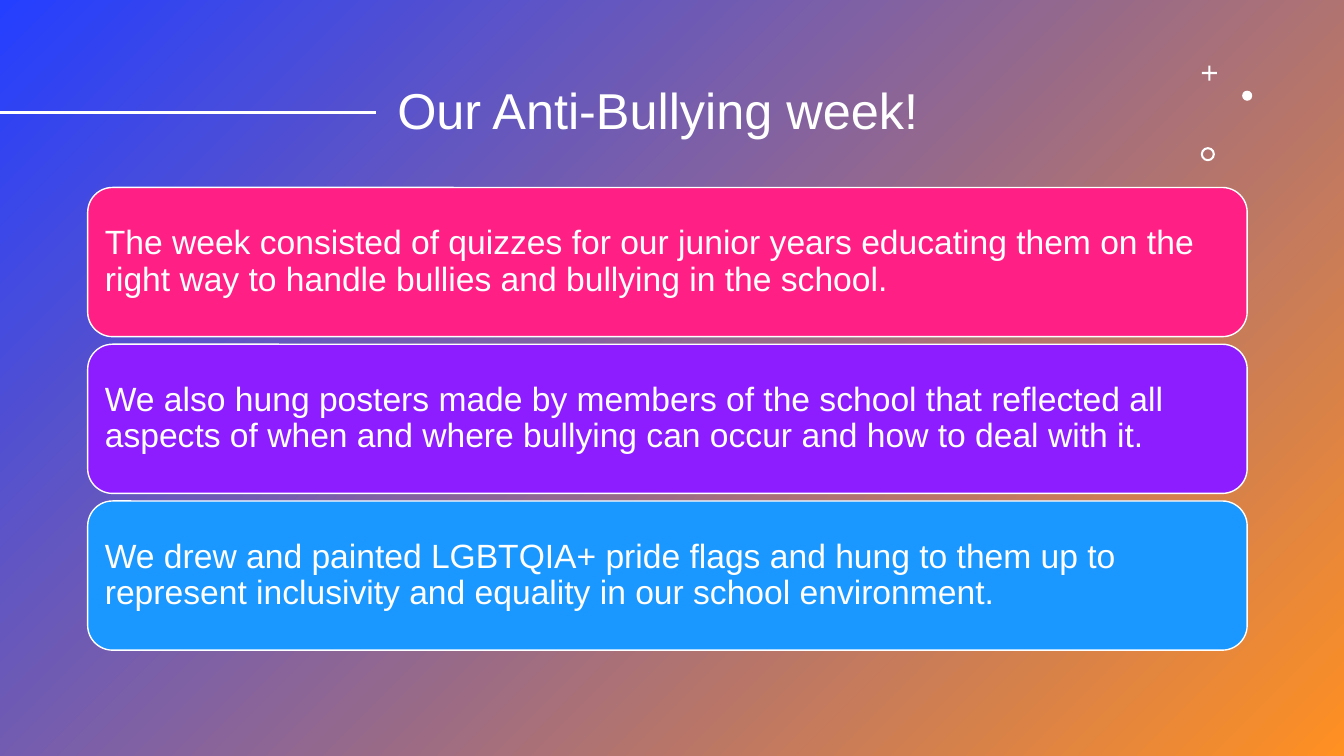
import pptx
import pptx.util
import pptx.dml.color
import pptx.enum.shapes
import pptx.enum.text
from lxml import etree

Inches, Pt = pptx.util.Inches, pptx.util.Pt
SHAPE = pptx.enum.shapes.MSO_SHAPE
TEXT = pptx.enum.text

TITLE = "Our Anti-Bullying week!"
WHITE = "FFFFFF"
GRADIENT = ["243FFF", "FF9022"]
CARDS = [
    ("FF1F85", "The week consisted of quizzes for our junior years educating "
               "them on the right way to handle bullies and bullying in the school."),
    ("8D1DFF", "We also hung posters made by members of the school that reflected "
               "all aspects of when and where bullying can occur and how to deal with it."),
    ("1A98FF", "We drew and painted LGBTQIA+ pride flags and hung to them up to "
               "represent inclusivity and equality in our school environment."),
]
# kind, left, top, size, adjustment
MARKS = [
    (SHAPE.CROSS, 11.92, 0.65, 0.15, 0.43),
    (SHAPE.OVAL, 12.32, 0.9, 0.1, None),
    (SHAPE.DONUT, 11.91, 1.46, 0.14, 0.15),
]
CARD_LEFT, CARD_TOP, CARD_WIDTH, CARD_HEIGHT, CARD_STEP = 0.87, 1.86, 11.5, 1.48, 1.555


def color(code):
    return pptx.dml.color.RGBColor.from_string(code)


def add_shape(kind, left, top, width, height, fill=None):
    """Add a shape with no shadow and no outline."""
    shape = slide.shapes.add_shape(
        kind, Inches(left), Inches(top), Inches(width), Inches(height))
    shape.shadow.inherit = False
    shape.line.fill.background()
    if fill:
        shape.fill.solid()
        shape.fill.fore_color.rgb = color(fill)
    return shape


def set_text(frame, text, size):
    """Write one white, left-aligned, vertically centred paragraph."""
    frame.text = text
    frame.word_wrap = True
    frame.auto_size = TEXT.MSO_AUTO_SIZE.NONE
    frame.vertical_anchor = TEXT.MSO_ANCHOR.MIDDLE
    para = frame.paragraphs[0]
    para.alignment = TEXT.PP_ALIGN.LEFT
    para.line_spacing = 0.9
    para.font.name = "Arial"
    para.font.size = Pt(size)
    para.font.color.rgb = color(WHITE)


deck = pptx.Presentation()
deck.slide_width, deck.slide_height = Inches(13.33), Inches(7.5)
slide = deck.slides.add_slide(deck.slide_layouts[5])

# Gradient panel, sent behind the title
panel = add_shape(SHAPE.RECTANGLE, 0, 0, 13.33, 7.5)
panel.fill.gradient()
panel.fill.gradient_angle = 315
for stop, code, place in zip(panel.fill.gradient_stops, GRADIENT, (0, 1)):
    stop.color.rgb = color(code)
    stop.position = place
slide.shapes.title.element.addprevious(panel.element)

title = slide.shapes.title
title.left, title.top = Inches(3.84), Inches(0.4)
title.width, title.height = Inches(7.83), Inches(1.45)
set_text(title.text_frame, TITLE, 36)

rule = slide.shapes.add_connector(
    pptx.enum.shapes.MSO_CONNECTOR.STRAIGHT,
    Inches(0), Inches(1.12), Inches(3.73), Inches(1.12))
rule.line.color.rgb = color(WHITE)
rule.line.width = Pt(2)
etree.SubElement(rule.element.spPr, pptx.oxml.ns.qn("a:effectLst"))

for kind, left, top, size, adjust in MARKS:
    mark = add_shape(kind, left, top, size, size, WHITE)
    if adjust is not None:
        mark.adjustments[0] = adjust

for row, (fill, text) in enumerate(CARDS):
    card = add_shape(SHAPE.ROUNDED_RECTANGLE, CARD_LEFT, CARD_TOP + row * CARD_STEP,
                     CARD_WIDTH, CARD_HEIGHT, fill)
    card.line.color.rgb = color(WHITE)
    card.line.width = Pt(1)
    set_text(card.text_frame, text, 24)

deck.save("out.pptx")
